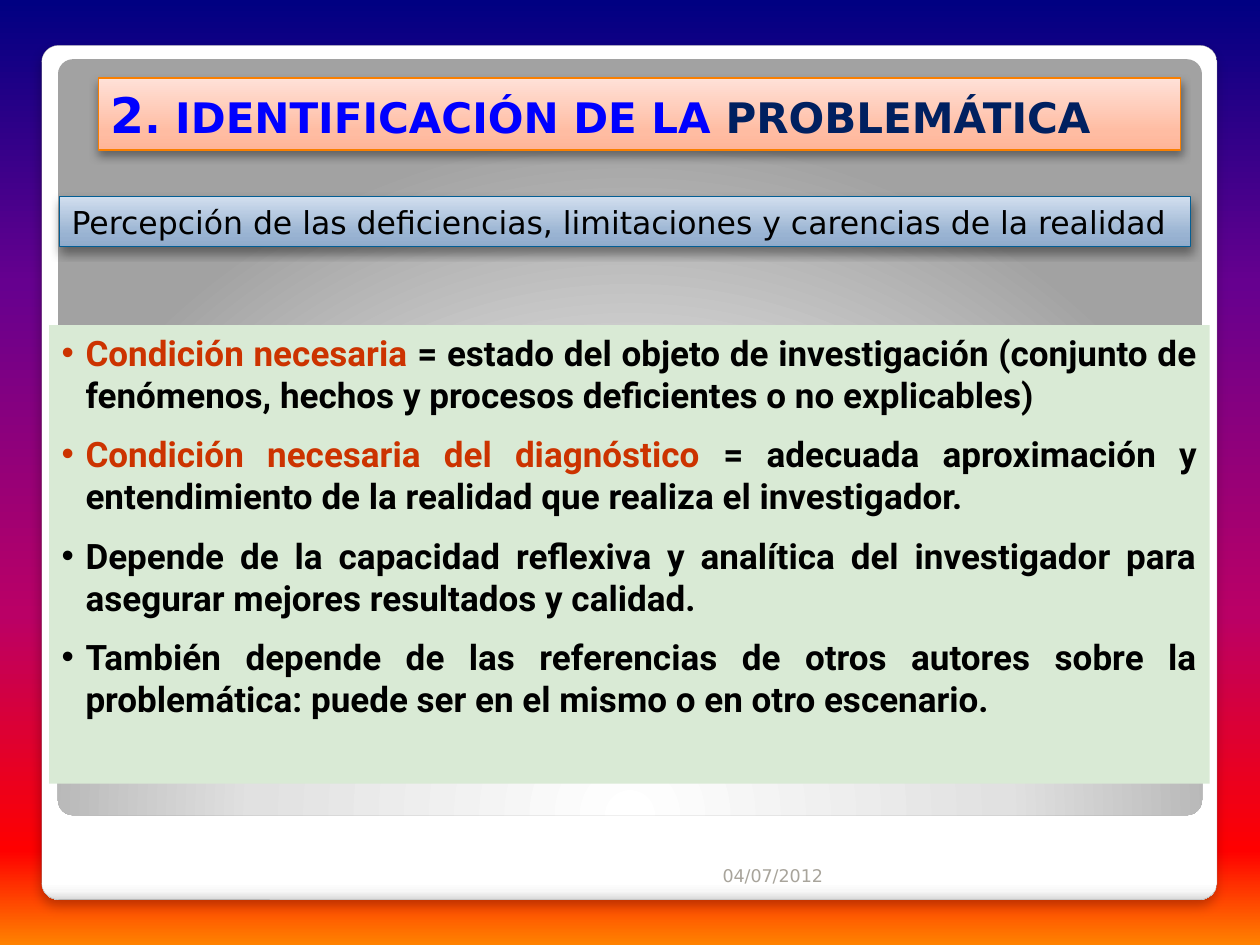
from dataclasses import dataclass

from lxml import etree
from pptx import Presentation
from pptx.dml.color import RGBColor
from pptx.enum.shapes import MSO_SHAPE
from pptx.enum.text import MSO_ANCHOR, PP_ALIGN
from pptx.oxml.ns import qn
from pptx.util import Inches, Pt

RECT, ROUNDED = MSO_SHAPE.RECTANGLE, MSO_SHAPE.ROUNDED_RECTANGLE
LEFT, RIGHT, JUSTIFY = PP_ALIGN.LEFT, PP_ALIGN.RIGHT, PP_ALIGN.JUSTIFY
TOP, BOTTOM = MSO_ANCHOR.TOP, MSO_ANCHOR.BOTTOM
DOWN, UP = 90, 270


@dataclass(frozen=True)
class Theme:
    heading_font: str = "DejaVu Sans"
    body_font: str = "Roboto"
    number_size: Pt = Pt(28)
    title_size: Pt = Pt(24)
    body_size: Pt = Pt(20)
    subtitle_size: Pt = Pt(18)
    date_size: Pt = Pt(10)
    blue: str = "0000FF"
    navy: str = "002060"
    red: str = "CC3300"
    black: str = "000000"
    date_grey: str = "A8A49B"
    frame_line: str = "A4A4A4"
    title_line: str = "F97F00"
    subtitle_line: str = "035E94"
    green: str = "D9EAD5"
    sky: tuple = ((0, "000082"), (30, "66008F"), (65, "BA0066"), (90, "FF0000"), (100, "FF8200"))
    frame: tuple = ((0, "FFFFFF"), (98, "FFFFFF"), (99, "F7F7F7"), (100, "DADADA"))
    glow: tuple = ((0, "FFFFFF"), (55, "E1E1E1"), (100, "A2A2A2"))
    peach: tuple = ((0, "FFB598"), (25, "FFBCA2"), (100, "FFE1D8"))
    steel: tuple = ((0, "90ABCB"), (25, "99B3D2"), (100, "D1DEEE"))


THEME = Theme()


def set_gradient(fill, owner, stops, angle=None):
    """Fill with several stops; without an angle, a circle centred below the shape."""
    fill.gradient()
    gradient = owner.find(".//" + qn("a:gradFill"))
    for child in list(gradient):
        gradient.remove(child)
    stop_list = etree.SubElement(gradient, qn("a:gsLst"))
    for position, color in stops:
        stop = etree.SubElement(stop_list, qn("a:gs"), pos=str(position * 1000))
        etree.SubElement(stop, qn("a:srgbClr"), val=color)
    if angle is None:
        circle = etree.SubElement(gradient, qn("a:path"), path="circle")
        etree.SubElement(circle, qn("a:fillToRect"), l="50000", t="175000", r="50000", b="-75000")
    else:
        etree.SubElement(gradient, qn("a:lin"), ang=str(angle * 60000), scaled="0")


def add_panel(kind, box, stops=None, angle=None, line=None, line_width=0.75, shadow=None):
    """Shadow is (opacity %, blur pt, distance pt), cast straight down."""
    panel = slide.shapes.add_shape(kind, *map(Inches, box))
    panel.shadow.inherit = False
    if kind == ROUNDED:
        panel.adjustments[0] = 0.02
    if stops:
        set_gradient(panel.fill, panel._element.spPr, stops, angle)
    if line:
        panel.line.color.rgb = RGBColor.from_string(line)
        panel.line.width = Pt(line_width)
    else:
        panel.line.fill.background()
    if shadow:
        opacity, blur, distance = shadow
        effects = panel._element.spPr.find(qn("a:effectLst"))
        cast = etree.SubElement(effects, qn("a:outerShdw"), blurRad=str(Pt(blur)),
                                dist=str(Pt(distance)), dir="5400000", rotWithShape="0")
        tint = etree.SubElement(cast, qn("a:srgbClr"), val=THEME.black)
        etree.SubElement(tint, qn("a:alpha"), val=str(opacity * 1000))
    panel.text_frame.word_wrap = True
    panel.text_frame.vertical_anchor = TOP
    return panel


prs = Presentation()
prs.slide_width, prs.slide_height = Inches(10), Inches(7.5)
slide = prs.slides.add_slide(prs.slide_layouts[6])
set_gradient(slide.background.fill, slide.element, THEME.sky, DOWN)

# Frame and inner board
add_panel(ROUNDED, (0.33, 0.36, 9.33, 6.78), THEME.frame, DOWN, THEME.frame_line, 0.16, (25, 6, 4))
add_panel(ROUNDED, (0.46, 0.47, 9.08, 6), THEME.glow)

title = add_panel(RECT, (0.78, 0.62, 8.59, 0.57), THEME.peach, UP, THEME.title_line,
                  shadow=(40, 5.2, 3))
conditions = add_panel(RECT, (0.39, 2.58, 9.21, 3.64))
conditions.fill.solid()
conditions.fill.fore_color.rgb = RGBColor.from_string(THEME.green)
subtitle = add_panel(RECT, (0.47, 1.56, 8.98, 0.4), THEME.steel, UP, THEME.subtitle_line,
                     shadow=(40, 5.2, 3))
date = slide.shapes.add_textbox(Inches(4.13), Inches(6.68), Inches(2.5), Inches(0.4))
date.text_frame.word_wrap = True
date.text_frame.vertical_anchor = BOTTOM

heading = title.text_frame.paragraphs[0]
heading.alignment = LEFT
heading.font.name, heading.font.bold = THEME.heading_font, True
for text, size, color in (
    ("2", THEME.number_size, THEME.blue),
    (". IDENTIFICACIÓN DE LA ", THEME.title_size, THEME.blue),
    ("PROBLEMÁTICA", THEME.title_size, THEME.navy),
):
    part = heading.add_run()
    part.text, part.font.size = text, size
    part.font.color.rgb = RGBColor.from_string(color)

for box, text, alignment, size, color in (
    (subtitle, "Percepción de las deficiencias, limitaciones y carencias de la realidad",
     LEFT, THEME.subtitle_size, THEME.black),
    (date, "04/07/2012", RIGHT, THEME.date_size, THEME.date_grey),
):
    line = box.text_frame.paragraphs[0]
    line.text, line.alignment = text, alignment
    line.font.name, line.font.size = THEME.heading_font, size
    line.font.color.rgb = RGBColor.from_string(color)

CONDITIONS = (
    ("Condición necesaria", " = estado del objeto de investigación (conjunto de fenómenos, "
     "hechos y procesos deficientes o no explicables)"),
    ("Condición necesaria del diagnóstico", " = adecuada aproximación y entendimiento de la "
     "realidad que realiza el investigador."),
    ("", "Depende de la capacidad reflexiva y analítica del investigador para asegurar "
     "mejores resultados y calidad."),
    ("", "También depende de las referencias de otros autores sobre la problemática: "
     "puede ser en el mismo o en otro escenario."),
)
frame = conditions.text_frame
for index, (term, explanation) in enumerate(CONDITIONS):
    item = frame.add_paragraph() if index else frame.paragraphs[0]
    item.alignment = JUSTIFY
    if index:
        item.space_before = Pt(10)
    properties = item._p.get_or_add_pPr()
    properties.set("marL", str(Inches(0.19)))
    properties.set("indent", str(Inches(-0.19)))
    etree.SubElement(properties, qn("a:buFont"), typeface="Arial")
    etree.SubElement(properties, qn("a:buChar"), char="•")
    item.font.name, item.font.size, item.font.bold = THEME.body_font, THEME.body_size, True
    for text, color in ((term, THEME.red), (explanation, THEME.black)):
        if text:
            part = item.add_run()
            part.text = text
            part.font.color.rgb = RGBColor.from_string(color)

prs.save("out.pptx")
